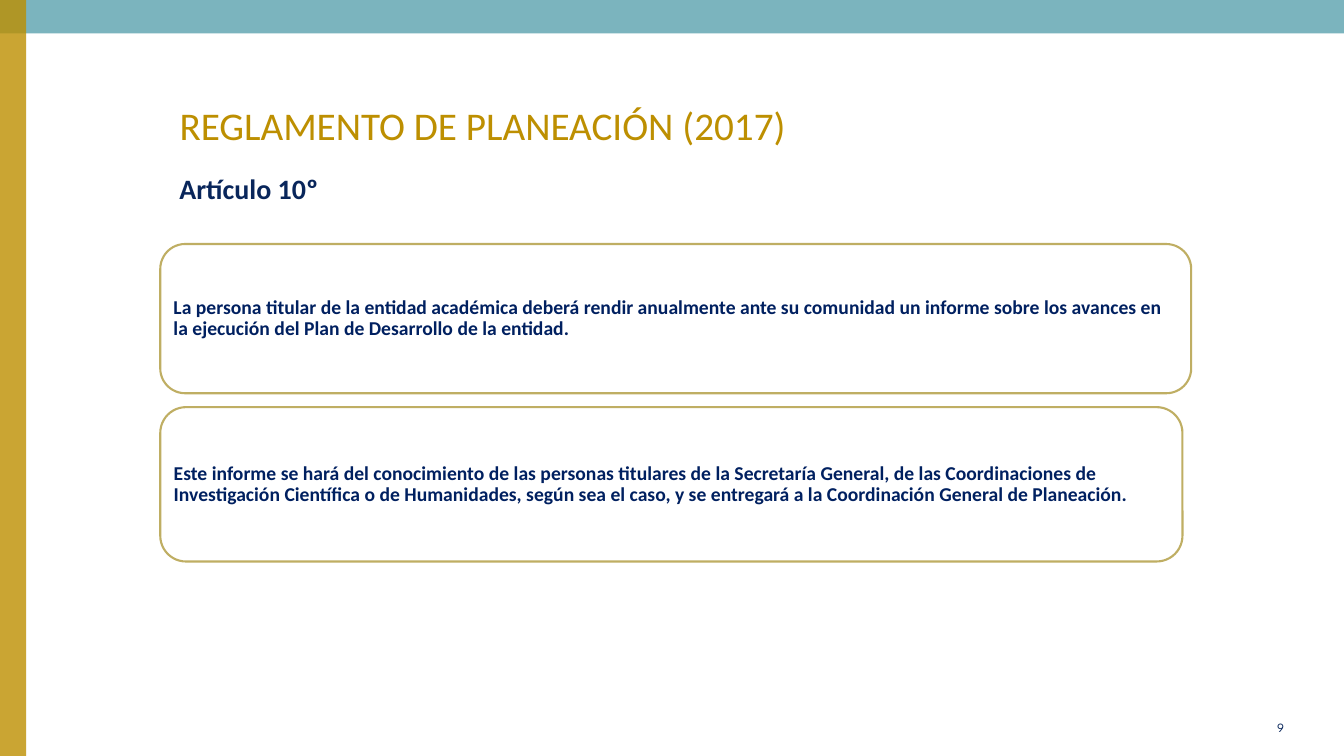
from lxml.etree import SubElement
from pptx import Presentation
from pptx.dml.color import RGBColor
from pptx.enum.shapes import MSO_SHAPE as Shape
from pptx.enum.text import MSO_ANCHOR as Anchor, MSO_AUTO_SIZE as AutoSize, PP_ALIGN as Align
from pptx.oxml.ns import qn
from pptx.util import Cm, Pt

GOLD = RGBColor(0xBD, 0x8F, 0x01)
TEAL = RGBColor(0x5A, 0xA2, 0xAE)
SAND = RGBColor(0xBF, 0xAE, 0x63)
NAVY = RGBColor(0x09, 0x26, 0x5B)
DEEP_BLUE = RGBColor(0x00, 0x20, 0x60)

WIDTH, HEIGHT = 33.87, 19.05
TITLE_LEFT, CARD_LEFT = 4.27, 4.04


class SlideBuilder:
    """Holds the text style and the slide; all lengths are in centimetres."""

    font_name = "Calibri"
    bar_opacity = 80

    def __init__(self, slide):
        self.slide = slide

    def add_text(self, shape, text, size, color, bold=False, font_name=None, align=Align.LEFT):
        frame = shape.text_frame
        frame.word_wrap = True
        frame.auto_size = AutoSize.NONE
        frame.vertical_anchor = Anchor.MIDDLE
        paragraph = frame.paragraphs[0]
        paragraph.alignment = align
        run = paragraph.add_run()
        run.text = text
        run.font.name = font_name or self.font_name
        run.font.size = Pt(size)
        run.font.bold = bold
        run.font.color.rgb = color
        return paragraph

    def title(self, text, left, top, width, height):
        shape = self.slide.shapes.title
        shape.left, shape.top, shape.width, shape.height = map(Cm, (left, top, width, height))
        self.add_text(shape, text, 28, GOLD)

    def label(self, text, left, top, width, height, **style):
        shape = self.slide.shapes.add_textbox(*map(Cm, (left, top, width, height)))
        return self.add_text(shape, text, color=NAVY, **style)

    def bar(self, width, height, color):
        shape = self.slide.shapes.add_shape(Shape.RECTANGLE, 0, 0, Cm(width), Cm(height))
        shape.shadow.inherit = False
        shape.line.fill.background()
        shape.fill.solid()
        shape.fill.fore_color.rgb = color
        color_element = shape.element.spPr.find(qn("a:solidFill"))[0]
        SubElement(color_element, qn("a:alpha"), val=str(self.bar_opacity * 1000))

    def card(self, text, top, width, height):
        shape = self.slide.shapes.add_shape(
            Shape.ROUNDED_RECTANGLE, *map(Cm, (CARD_LEFT, top, width, height)))
        shape.shadow.inherit = False
        shape.fill.background()
        shape.line.color.rgb = SAND
        shape.line.width = Pt(1.5)
        frame = shape.text_frame
        frame.margin_left = frame.margin_right = Cm(0.15)
        frame.margin_top = frame.margin_bottom = Cm(0.08)
        paragraph = self.add_text(shape, text, 14, DEEP_BLUE, bold=True)
        paragraph.line_spacing = 0.9
        paragraph.space_after = Pt(5)


def main():
    presentation = Presentation()
    presentation.slide_width, presentation.slide_height = Cm(WIDTH), Cm(HEIGHT)
    title_only = presentation.slide_layouts[5]
    builder = SlideBuilder(presentation.slides.add_slide(title_only))

    # Edge bars
    builder.bar(WIDTH, 0.84, TEAL)
    builder.bar(0.66, HEIGHT, GOLD)

    # Heading
    builder.title("REGLAMENTO DE PLANEACIÓN (2017)", TITLE_LEFT, 1.7, 28.35, 2.9)
    article = builder.label("Artículo 10º", TITLE_LEFT, 4.01, 6.58, 1.45, size=20, bold=True)
    article.space_after = Pt(6)

    # Article paragraphs
    builder.card(
        "La persona titular de la entidad académica deberá rendir anualmente ante su "
        "comunidad un informe sobre los avances en la ejecución del Plan de Desarrollo "
        "de la entidad.", 6.15, 25.98, 3.76)
    builder.card(
        "Este informe se hará del conocimiento de las personas titulares de la Secretaría "
        "General, de las Coordinaciones de Investigación Científica o de Humanidades, según "
        "sea el caso, y se entregará a la Coordinación General de Planeación.",
        10.26, 25.76, 3.89)

    # Page number
    builder.label("9", 31.09, 17.81, 1.52, 1.02, size=9,
                  font_name="League Spartan", align=Align.RIGHT)

    presentation.save("out.pptx")


if __name__ == "__main__":
    main()
